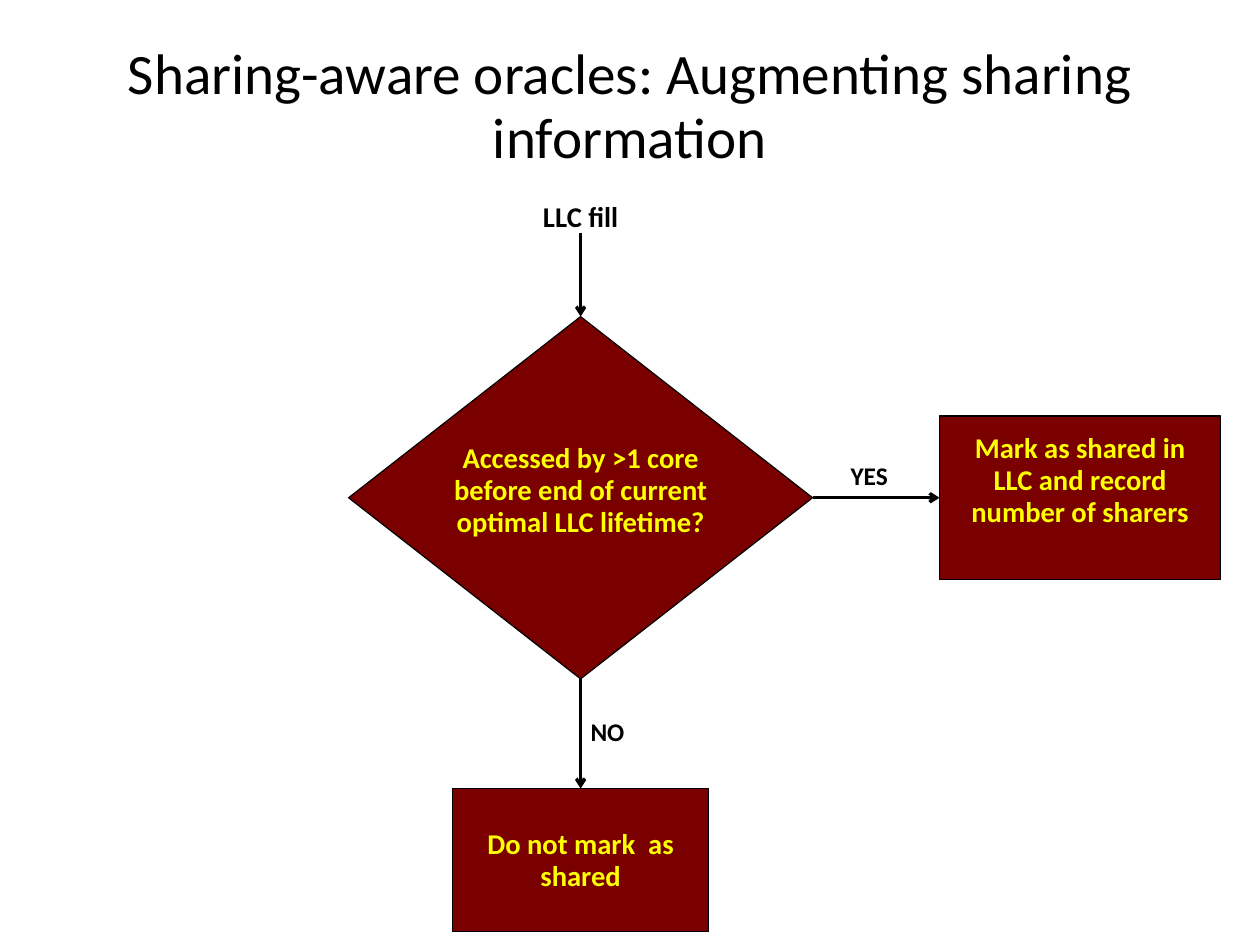
from lxml.etree import SubElement
from pptx import Presentation
from pptx.dml.color import RGBColor
from pptx.enum.shapes import MSO_CONNECTOR, MSO_SHAPE
from pptx.enum.text import MSO_ANCHOR, MSO_AUTO_SIZE, PP_ALIGN
from pptx.oxml.ns import qn
from pptx.util import Cm, Inches, Pt

COLORS = {"ink": "000000", "node": "7A0000", "node_text": "FFFF00"}
TOP, LEFT, BOTTOM, RIGHT = range(4)


def rgb(name):
    """Return the named palette colour."""
    return RGBColor.from_string(COLORS[name])


def write(frame, wording, size, color="ink", bold=True, insets=(0.1, 0.05),
          anchor=MSO_ANCHOR.TOP):
    """Fill a text frame with one centred paragraph."""
    side, top = insets
    frame.word_wrap = True
    frame.auto_size = MSO_AUTO_SIZE.NONE
    frame.vertical_anchor = anchor
    frame.margin_left = frame.margin_right = Inches(side)
    frame.margin_top, frame.margin_bottom = Inches(top), Inches(0)
    paragraph = frame.paragraphs[0]
    paragraph.text = wording
    paragraph.alignment = PP_ALIGN.CENTER
    paragraph.line_spacing = 0.93
    paragraph.font.name = "Calibri"
    paragraph.font.size = Pt(size)
    paragraph.font.bold = bold
    paragraph.font.color.rgb = rgb(color)


def add_label(slide, box, wording, size, color="ink"):
    """Add a bold free-standing label."""
    label = slide.shapes.add_textbox(*map(Inches, box))
    write(label.text_frame, wording, size, color)


def add_node(slide, preset, box):
    """Add a filled flowchart node."""
    node = slide.shapes.add_shape(preset, *map(Inches, box))
    node.shadow.inherit = False
    node.fill.solid()
    node.fill.fore_color.rgb = rgb("node")
    node.line.color.rgb = rgb("ink")
    node.line.width = Pt(0.75)
    return node


def add_arrow(slide, start, end):
    """Add a straight arrow between two points."""
    arrow = slide.shapes.add_connector(
        MSO_CONNECTOR.STRAIGHT, *map(Inches, start + end))
    arrow.line.color.rgb = rgb("ink")
    arrow.line.width = Pt(2)
    SubElement(arrow.line._get_or_add_ln(), qn("a:tailEnd"), type="arrow")
    SubElement(arrow._element.spPr, qn("a:effectLst"))
    return arrow


def add_title(slide, box):
    """Place and format the slide title."""
    title = slide.shapes.title
    title.left, title.top, title.width, title.height = map(Inches, box)
    write(title.text_frame, "Sharing-aware oracles: Augmenting sharing information",
          36, bold=False, insets=(0, 0), anchor=MSO_ANCHOR.MIDDLE)


def add_flowchart(slide, box):
    """Draw the sharing decision with its entry and two outcomes."""
    left, top, width, height = box
    center, middle = left + 2.03, top + 2.63
    decision_top, decision_bottom = top + 1.05, top + 4.22
    outcome_top = top + 5.18
    shared_left = left + width - 2.46

    add_label(slide, (center - 0.55, top, 1.1, 0.38), "LLC fill", 18)
    decision = add_node(slide, MSO_SHAPE.FLOWCHART_DECISION,
                        (left, decision_top, 4.06, 3.17))
    add_label(slide, (center - 1.34, middle - 0.52, 2.68, 0.95),
              "Accessed by >1 core before end of current optimal LLC lifetime?",
              18, "node_text")
    shared = add_node(slide, MSO_SHAPE.FLOWCHART_PROCESS,
                      (shared_left, middle - 0.71, 2.46, 1.43))
    write(shared.text_frame, "Mark as shared in LLC and record number of sharers",
          18, "node_text", insets=(0.24, 0.15))
    unshared = add_node(slide, MSO_SHAPE.FLOWCHART_PROCESS,
                        (center - 1.12, outcome_top, 2.24, height - 5.18))
    write(unshared.text_frame, "Do not mark  as shared",
          18, "node_text", insets=(0.13, 0.35))

    entry = add_arrow(slide, (center, top + 0.32), (center, decision_top))
    entry.end_connect(decision, TOP)
    yes = add_arrow(slide, (left + 4.06, middle), (shared_left, middle))
    yes.begin_connect(decision, RIGHT)
    yes.end_connect(shared, LEFT)
    no = add_arrow(slide, (center, decision_bottom), (center, outcome_top))
    no.begin_connect(decision, BOTTOM)
    no.end_connect(unshared, TOP)
    add_label(slide, (left + 4.07, middle - 0.35, 0.97, 0.35), "YES", 16)
    add_label(slide, (center - 0.25, decision_bottom + 0.3, 0.97, 0.35), "NO", 16)


def main():
    """Build and save the presentation."""
    deck = Presentation()
    deck.slide_width, deck.slide_height = Cm(28), Cm(21)
    slide = deck.slides.add_slide(deck.slide_layouts[5])
    add_title(slide, (0.55, 0.33, 9.92, 1.22))
    add_flowchart(slide, (3.05, 1.72, 7.63, 6.43))
    deck.save("out.pptx")


if __name__ == "__main__":
    main()
